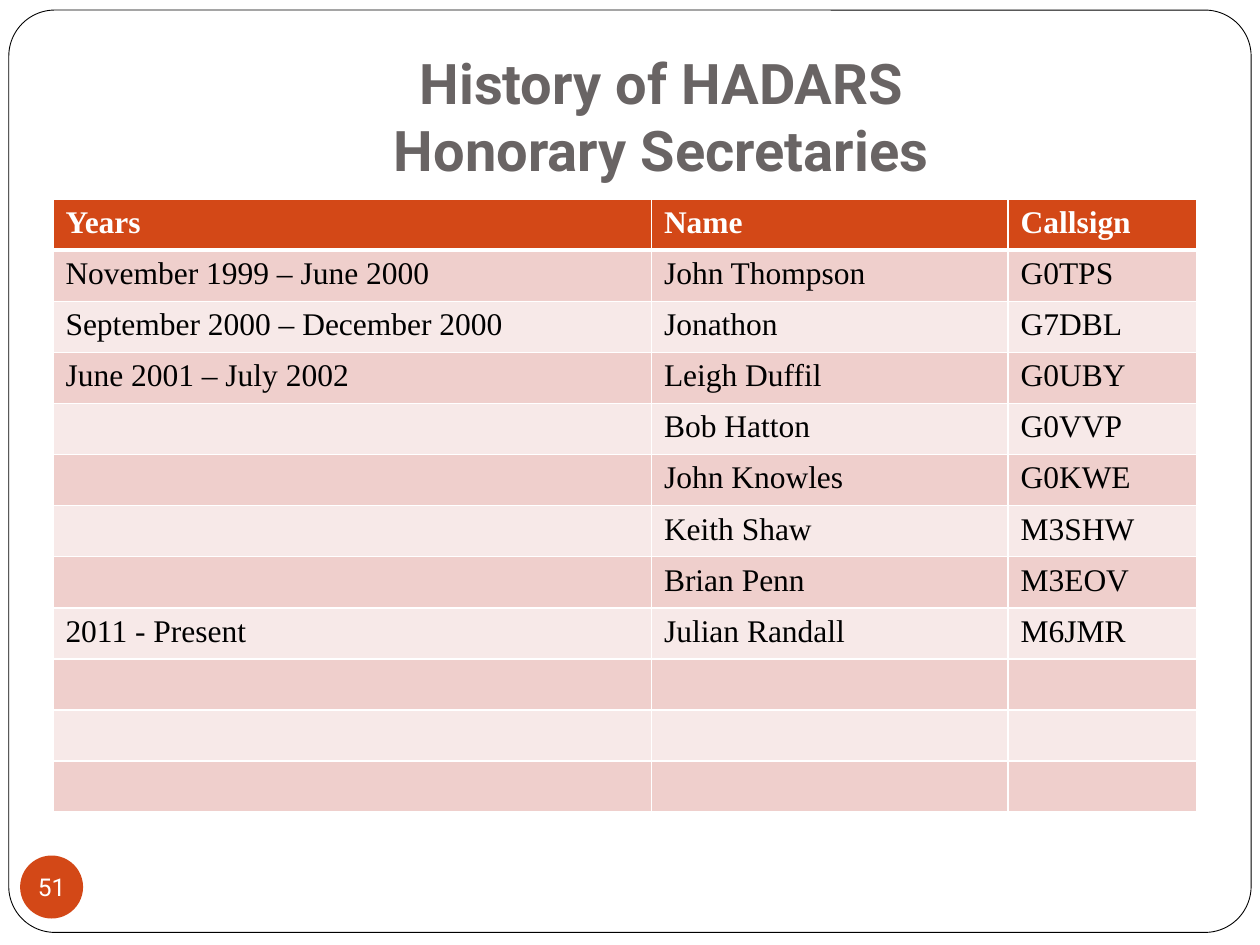
from lxml.etree import SubElement
from pptx import Presentation
from pptx.dml.color import RGBColor
from pptx.enum.shapes import MSO_SHAPE
from pptx.enum.text import MSO_ANCHOR, MSO_AUTO_SIZE, PP_ALIGN
from pptx.oxml.ns import qn
from pptx.util import Inches, Pt

WHITE, BLACK, GREY = "FFFFFF", "000000", "696464"
RUST, ROSE, BLUSH = "D34817", "EFCFCC", "F7E9E8"
SANS, SERIF = "Roboto", "Times New Roman"
COLS = [4.75, 2.83, 1.5]
ROW = 4.87 / 12
ROWS = [
    ("Years", "Name", "Callsign"),
    ("November 1999 – June 2000", "John Thompson", "G0TPS"),
    ("September 2000 – December 2000", "Jonathon", "G7DBL"),
    ("June 2001 – July 2002", "Leigh Duffil", "G0UBY"),
    ("", "Bob Hatton", "G0VVP"),
    ("", "John Knowles", "G0KWE"),
    ("", "Keith Shaw", "M3SHW"),
    ("", "Brian Penn", "M3EOV"),
    ("2011 - Present", "Julian Randall", "M6JMR"),
] + [("", "", "")] * 3


def tint(hue):
    return RGBColor.from_string(hue)


def apply(item, form):
    for key, value in form.items():
        setattr(item, key, value)


def write(frame, text, hue, font, align=None):
    para = frame.paragraphs[0]
    para.text = text
    para.alignment = align
    apply(para.font, font)
    para.font.color.rgb = tint(hue)


def place(item, box):
    apply(item, dict(zip(("left", "top", "width", "height"), map(Inches, box))))


def add_shape(slide, kind, box, hue):
    shape = slide.shapes.add_shape(kind, *map(Inches, box))
    shape.shadow.inherit = False
    shape.fill.solid()
    shape.fill.fore_color.rgb = tint(hue)
    shape.line.fill.background()
    return shape


def add_frame(slide):
    """Put the rounded page border behind everything else."""
    frame = add_shape(slide, MSO_SHAPE.ROUNDED_RECTANGLE,
                      (0.07, 0.08, 9.86, 7.32), WHITE)
    frame.adjustments[0] = 0.05
    frame.line.color.rgb = tint(BLACK)
    frame.line.width = Pt(0.5)
    slide.shapes._spTree.insert(2, frame._element)


def add_title(slide, text):
    title = slide.shapes.title
    place(title, (1, 0.3, 8.5, 1.25))
    apply(title.text_frame, {
        "auto_size": MSO_AUTO_SIZE.NONE, "word_wrap": True,
        "vertical_anchor": MSO_ANCHOR.BOTTOM,
        "margin_left": Inches(0.1), "margin_right": Inches(0.1),
        "margin_top": Inches(0.05), "margin_bottom": Inches(0.1)})
    write(title.text_frame, text, GREY,
          {"name": SANS, "size": Pt(32), "bold": True}, PP_ALIGN.CENTER)


def edge(cell, side, width):
    line = SubElement(cell._tc.get_or_add_tcPr(), qn(f"a:ln{side}"),
                      w=str(Pt(width)))
    fill = SubElement(line, qn("a:solidFill"))
    SubElement(fill, qn("a:srgbClr"), val=WHITE)


def fill_cell(cell, text, row):
    head = row == 0
    widths = {"L": 1, "R": 1, "T": 3 if row == 1 else 1, "B": 3 if head else 1}
    for side, width in widths.items():
        edge(cell, side, width)
    cell.fill.solid()
    cell.fill.fore_color.rgb = tint(RUST if head else (BLUSH, ROSE)[row % 2])
    write(cell.text_frame, text, WHITE if head else BLACK,
          {"name": SERIF, "size": Pt(18), "bold": head})


def add_table(slide):
    box = (0.42, 1.58, sum(COLS), ROW * len(ROWS))
    table = slide.shapes.add_table(len(ROWS), len(COLS),
                                   *map(Inches, box)).table
    for col, width in zip(table.columns, COLS):
        col.width = Inches(width)
    for r, texts in enumerate(ROWS):
        table.rows[r].height = Inches(ROW)
        for c, text in enumerate(texts):
            fill_cell(table.cell(r, c), text, r)


def add_badge(slide, text):
    badge = add_shape(slide, MSO_SHAPE.OVAL, (0.16, 6.79, 0.5, 0.5), RUST)
    frame = badge.text_frame
    apply(frame, dict.fromkeys(("margin_left", "margin_right",
                                "margin_top", "margin_bottom"), 0))
    apply(frame, {"word_wrap": False, "vertical_anchor": MSO_ANCHOR.MIDDLE})
    write(frame, text, WHITE, {"name": SANS, "size": Pt(14)}, PP_ALIGN.CENTER)


def main():
    deck = Presentation()
    apply(deck, {"slide_width": Inches(10), "slide_height": Inches(7.5)})
    slide = deck.slides.add_slide(deck.slide_layouts[5])
    add_frame(slide)
    add_title(slide, "History of HADARS\nHonorary Secretaries")
    add_table(slide)
    add_badge(slide, "51")
    deck.save("out.pptx")


if __name__ == "__main__":
    main()
